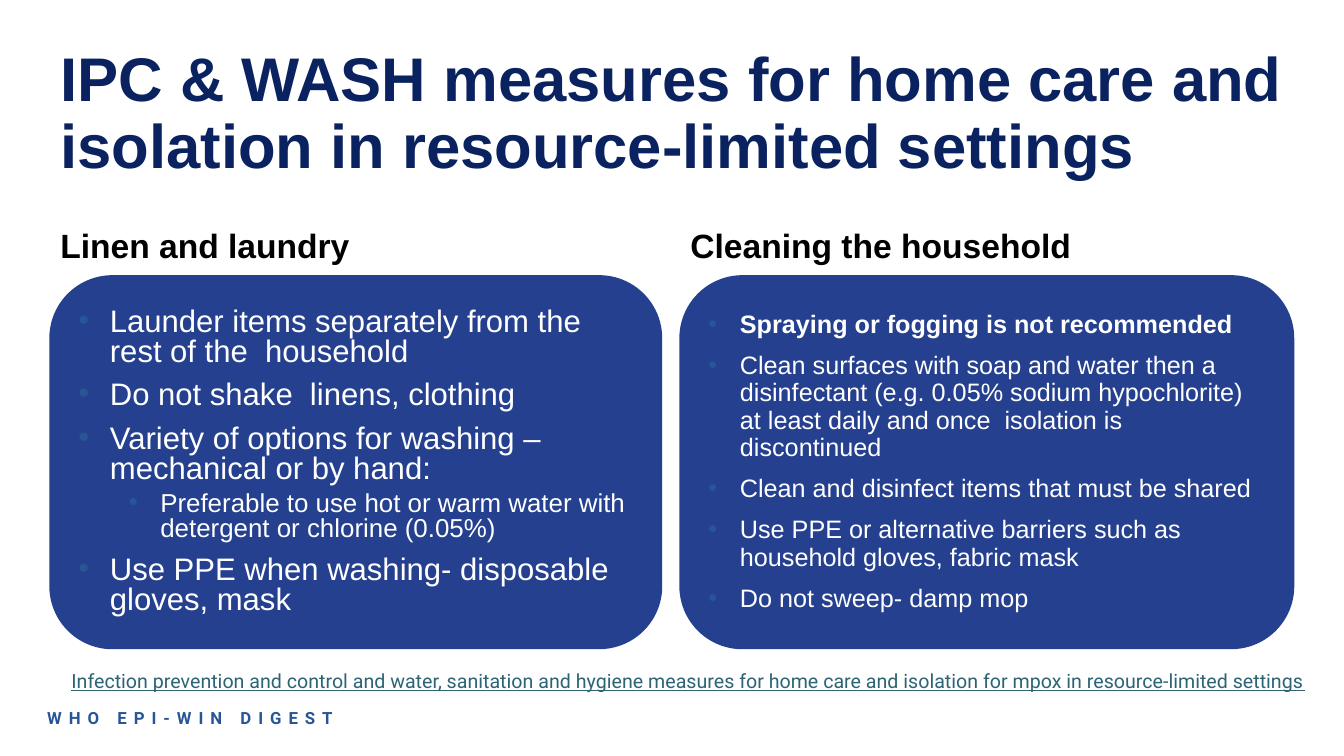
from dataclasses import dataclass

from lxml.etree import SubElement
from pptx import Presentation
from pptx.dml.color import RGBColor
from pptx.enum.shapes import MSO_SHAPE
from pptx.enum.text import MSO_ANCHOR, MSO_AUTO_SIZE, PP_ALIGN
from pptx.oxml.ns import qn
from pptx.util import Pt

NAVY = RGBColor(0x0A, 0x22, 0x5F)
BLUE = RGBColor(0x25, 0x40, 0x8F)
MID = RGBColor(0x28, 0x55, 0x96)
TEAL = RGBColor(0x2C, 0x64, 0x74)
BLACK = RGBColor(0, 0, 0)
WHITE = RGBColor(255, 255, 255)

HEAD_TOP, HEAD_HIGH = 138.24, 55.44
CARD_TOP, CARD_HIGH = 197.28, 265.68
INDENT, STEP = 22.5, 36


@dataclass
class Item:
    text: str
    size: float
    bold: bool = False
    level: int = 0


@dataclass
class Card:
    left: float
    width: float
    head: str
    space: float
    items: list[Item]


CARDS = [
    Card(36, 436.32, "Linen and laundry", 0.8, [
        Item("Launder items separately from the rest of the  household", 22.2),
        Item("Do not shake  linens, clothing", 22.2),
        Item("Variety of options for washing –mechanical or by hand:", 22.2),
        Item("Preferable to use hot or warm water with detergent or chlorine (0.05%)",
             18.5, level=1),
        Item("Use PPE when washing- disposable  gloves, mask", 22.2),
    ]),
    Card(486, 437.76, "Cleaning the household", 0.9, [
        Item("Spraying or fogging is not recommended", 18, bold=True),
        Item("Clean surfaces with soap and water then a disinfectant "
             "(e.g. 0.05% sodium hypochlorite) at least daily and once  "
             "isolation is discontinued", 18),
        Item("Clean and disinfect items that must be shared", 18),
        Item("Use PPE or alternative barriers such as  household gloves, fabric mask", 18),
        Item("Do not sweep- damp mop", 18),
    ]),
]


def style(para, size: float, color: RGBColor, bold: bool = False,
          name: str = "Arial") -> None:
    font = para.font
    font.name, font.size, font.bold = name, Pt(size), bold
    font.color.rgb = color


def add_text(slide, box: tuple, text: str, anchor=MSO_ANCHOR.TOP):
    frame = slide.shapes.add_textbox(*map(Pt, box)).text_frame
    frame.word_wrap = True
    frame.vertical_anchor = anchor
    para = frame.paragraphs[0]
    para.text = text
    return para


def add_bullet(para, level: int) -> None:
    props = para._p.get_or_add_pPr()
    props.set("marL", str(Pt(INDENT + STEP * level)))
    props.set("indent", str(-Pt(INDENT)))
    tint = SubElement(props, qn("a:buClr"))
    SubElement(tint, qn("a:srgbClr")).set("val", str(MID))
    SubElement(props, qn("a:buFont")).set("typeface", "Arial")
    SubElement(props, qn("a:buChar")).set("char", "•")


def add_card(slide, card: Card) -> None:
    head = add_text(slide, (card.left, HEAD_TOP, card.width, HEAD_HIGH),
                    card.head, MSO_ANCHOR.BOTTOM)
    head.line_spacing = 0.9
    style(head, 24, BLACK, True)

    panel = slide.shapes.add_shape(
        MSO_SHAPE.ROUNDED_RECTANGLE,
        *map(Pt, (card.left, CARD_TOP, card.width, CARD_HIGH)))
    panel.shadow.inherit = False
    panel.fill.solid()
    panel.fill.fore_color.rgb = BLUE
    panel.line.color.rgb = BLUE
    panel.line.width = Pt(1.5)
    frame = panel.text_frame
    frame.word_wrap = True
    frame.vertical_anchor = MSO_ANCHOR.MIDDLE
    for rank, item in enumerate(card.items):
        para = frame.add_paragraph() if rank else frame.paragraphs[0]
        para.text = item.text
        para.level = item.level
        para.alignment = PP_ALIGN.LEFT
        add_bullet(para, item.level)
        para.line_spacing = card.space
        if rank:
            para.space_before = Pt(5 if item.level else 10)
        style(para, item.size, WHITE, item.bold)


def add_title(slide, text: str) -> None:
    title = slide.shapes.title
    title.left, title.top, title.width, title.height = map(
        Pt, (36, 28.8, 888.48, 104.4))
    frame = title.text_frame
    frame.text = text
    frame.auto_size = MSO_AUTO_SIZE.NONE
    frame.vertical_anchor = MSO_ANCHOR.BOTTOM
    para = frame.paragraphs[0]
    para.alignment = PP_ALIGN.LEFT
    para.line_spacing = 0.9
    style(para, 44, NAVY, True)


def main() -> None:
    deck = Presentation()
    deck.slide_width, deck.slide_height = Pt(960), Pt(540)
    slide = deck.slides.add_slide(deck.slide_layouts[5])
    add_title(slide, "IPC & WASH measures for home care and isolation "
                     "in resource-limited settings")
    for card in CARDS:
        add_card(slide, card)

    source = add_text(slide, (43.92, 474.48, 930.96, 24.48),
                      "Infection prevention and control and water, sanitation and "
                      "hygiene measures for home care and isolation for mpox in "
                      "resource-limited settings")
    style(source, 14, TEAL, name="Roboto")
    source.font.underline = True

    brand = add_text(slide, (26.64, 501.84, 374.4, 21.6), "WHO EPI-WIN DIGEST")
    style(brand, 12, MID, True, "Roboto")
    brand.runs[0]._r.get_or_add_rPr().set("spc", "500")
    deck.save("out.pptx")


if __name__ == "__main__":
    main()
